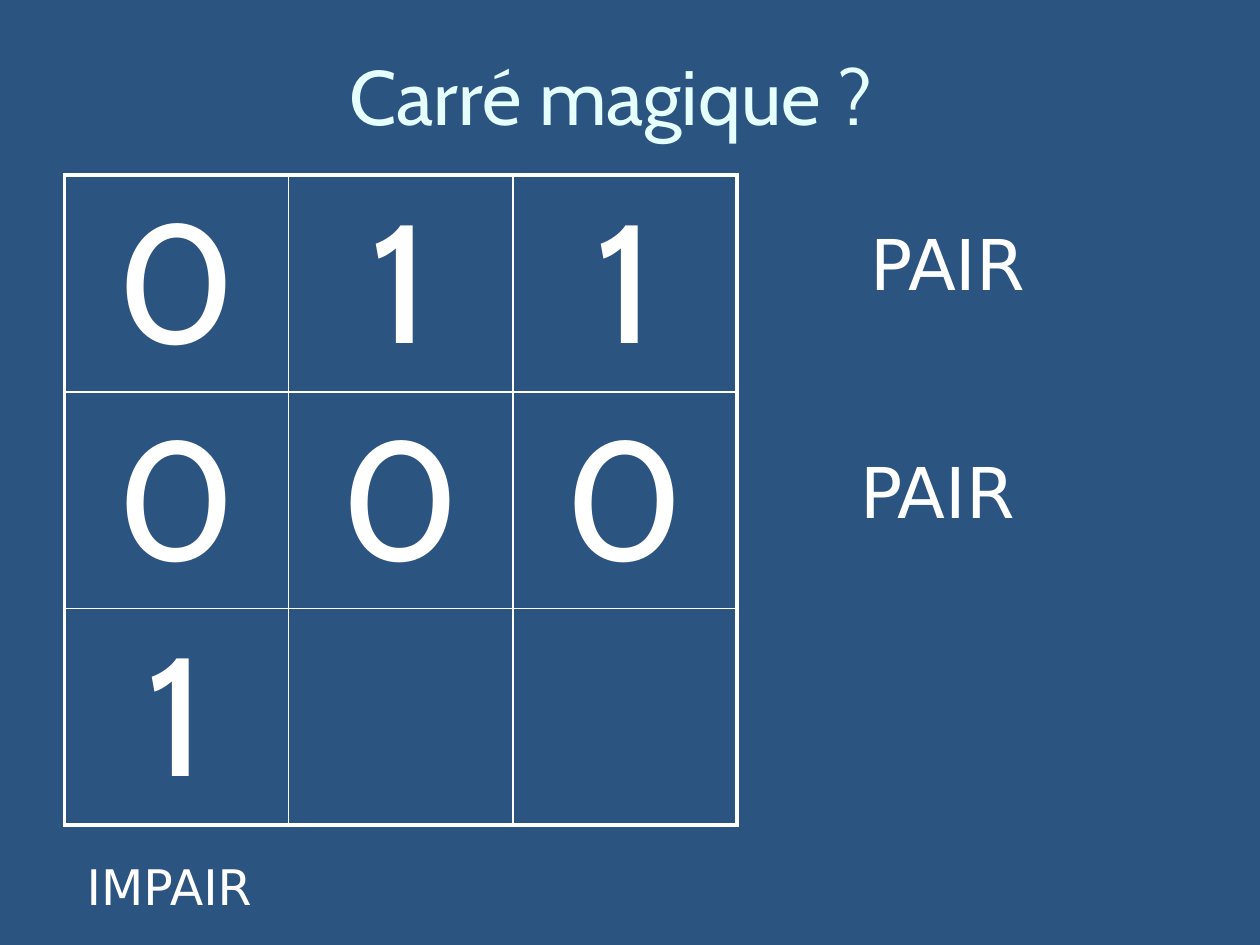
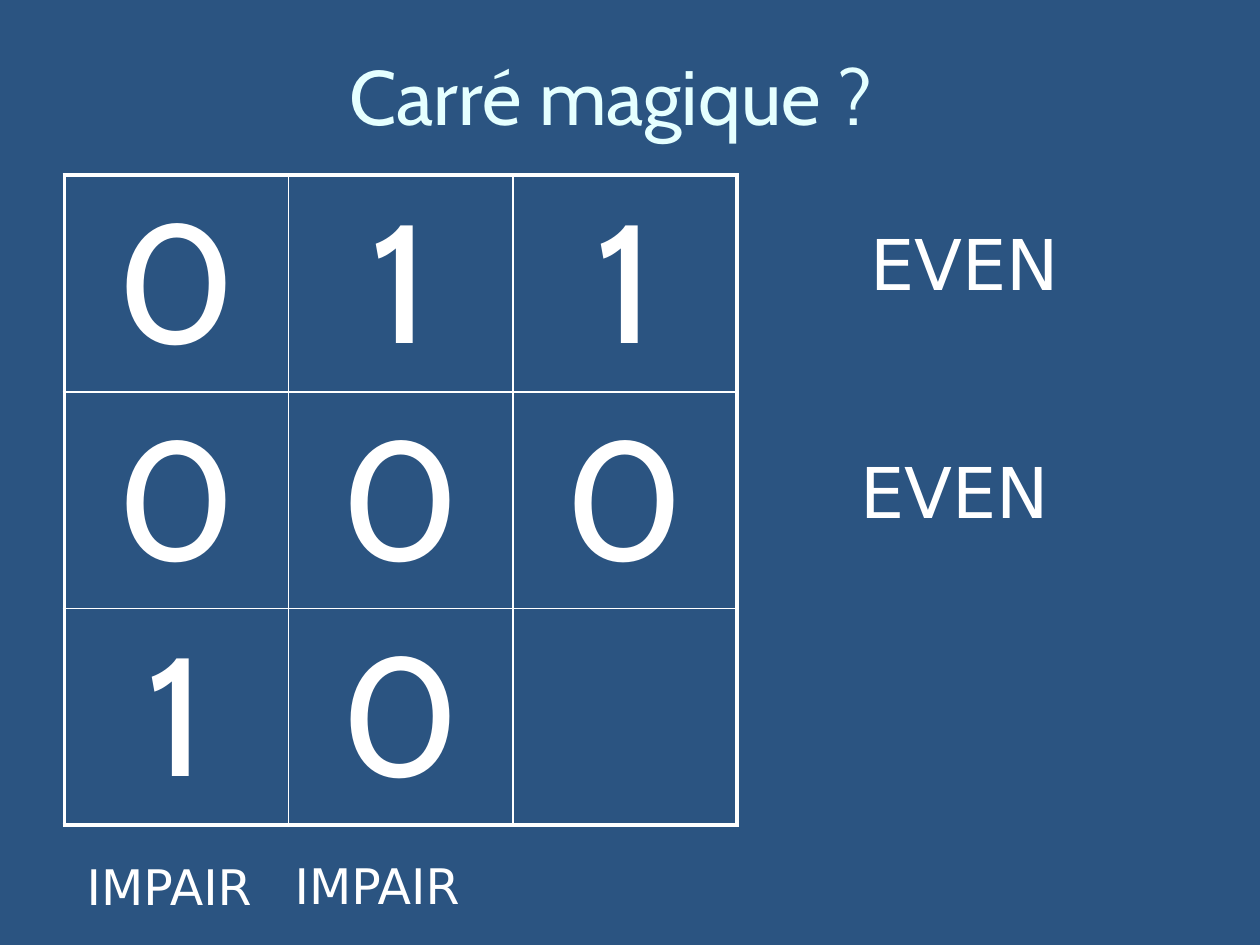
"""Two slides asking whether a grid of bits is a magic square of parities."""
from dataclasses import dataclass

from lxml.etree import SubElement
from pptx import Presentation
from pptx.dml.color import RGBColor
from pptx.enum.text import MSO_ANCHOR, MSO_AUTO_SIZE, PP_ALIGN
from pptx.oxml.ns import qn
from pptx.slide import Slide
from pptx.table import _Cell as Cell
from pptx.util import Inches, Pt


@dataclass(frozen=True)
class Theme:
    background: str = "2B5481"
    title: str = "E5FFFF"
    text: str = "FFFFFF"
    display_font: str = "Cabin"
    label_font: str = "DejaVu Sans"
    title_size: int = 44
    digit_size: int = 96
    row_size: int = 40
    column_size: int = 28
    outer_line: float = 2.25
    inner_line: float = 1


@dataclass(frozen=True)
class Label:
    text: str
    left: float
    top: float
    width: float
    height: float
    size: int


@dataclass(frozen=True)
class Square:
    rows: tuple[str, ...]
    labels: tuple[Label, ...]


THEME = Theme()
SIDE = 3
COLUMN_WIDTH, ROW_HEIGHT = 1.78, 1.72


def row_labels(text: str, width: float) -> tuple[Label, ...]:
    """Return the parity labels beside the first two rows."""
    return tuple(Label(text, left, top, width, 0.77, THEME.row_size)
                 for left, top in ((6.81, 1.7), (6.73, 3.51)))


def column_label(left: float, top: float) -> Label:
    """Return an odd-parity label below a column."""
    return Label("IMPAIR", left, top, 1.63, 0.57, THEME.column_size)


FIRST_COLUMN = column_label(0.59, 6.75)
SQUARES = (
    Square(("011", "000", "1  "), (*row_labels("PAIR", 1.54), FIRST_COLUMN)),
    Square(("011", "000", "10 "),
           (*row_labels("EVEN", 1.7), FIRST_COLUMN, column_label(2.24, 6.74))),
)


def style_font(p, font: str, size: int, color: str) -> None:
    """Set the font of a whole paragraph."""
    p.font.name = font
    p.font.size = Pt(size)
    p.font.color.rgb = RGBColor.from_string(color)


def add_title(s: Slide) -> None:
    """Add the shared slide title."""
    tf = s.shapes.add_textbox(Inches(0.35), 0, Inches(9), Inches(1.5)).text_frame
    tf.word_wrap = True
    tf.vertical_anchor = MSO_ANCHOR.MIDDLE
    p = tf.paragraphs[0]
    p.text = "Carré magique ?"
    p.alignment = PP_ALIGN.CENTER
    style_font(p, THEME.display_font, THEME.title_size, THEME.title)


def add_label(s: Slide, label: Label) -> None:
    """Add a parity label that fits its text."""
    box = s.shapes.add_textbox(Inches(label.left), Inches(label.top),
                               Inches(label.width), Inches(label.height))
    tf = box.text_frame
    tf.word_wrap = False
    tf.auto_size = MSO_AUTO_SIZE.SHAPE_TO_FIT_TEXT
    p = tf.paragraphs[0]
    p.text = label.text
    style_font(p, THEME.label_font, label.size, THEME.text)


def set_borders(cell: Cell, row: int, col: int) -> None:
    """Draw thick lines on the edge of the square and thin ones inside."""
    last = SIDE - 1
    edges = {"a:lnL": col == 0, "a:lnR": col == last,
             "a:lnT": row == 0, "a:lnB": row == last}
    tc_pr = cell._tc.get_or_add_tcPr()
    for tag, is_outer in edges.items():
        width = THEME.outer_line if is_outer else THEME.inner_line
        ln = SubElement(tc_pr, qn(tag), w=str(Pt(width)))
        fill = SubElement(ln, qn("a:solidFill"))
        SubElement(fill, qn("a:srgbClr"), val=THEME.text)


def add_square(s: Slide, rows: tuple[str, ...]) -> None:
    """Add the table of bits, leaving spaces as empty cells."""
    table = s.shapes.add_table(SIDE, SIDE, Inches(0.51), Inches(1.39),
                               Inches(SIDE * COLUMN_WIDTH),
                               Inches(SIDE * ROW_HEIGHT)).table
    table.first_row = table.horz_banding = False
    for i, bits in enumerate(rows):
        for j, bit in enumerate(bits):
            cell = table.cell(i, j)
            set_borders(cell, i, j)
            cell.fill.background()
            cell.vertical_anchor = MSO_ANCHOR.MIDDLE
            if bit != " ":
                p = cell.text_frame.paragraphs[0]
                p.text = bit
                p.alignment = PP_ALIGN.CENTER
                style_font(p, THEME.display_font, THEME.digit_size, THEME.text)


def main() -> None:
    """Build and save the presentation."""
    prs = Presentation()
    prs.slide_width, prs.slide_height = Inches(10), Inches(7.5)
    for square in SQUARES:
        s = prs.slides.add_slide(prs.slide_layouts[6])
        s.background.fill.solid()
        s.background.fill.fore_color.rgb = RGBColor.from_string(THEME.background)
        add_title(s)
        add_square(s, square.rows)
        for label in square.labels:
            add_label(s, label)
    prs.save("out.pptx")


if __name__ == "__main__":
    main()
